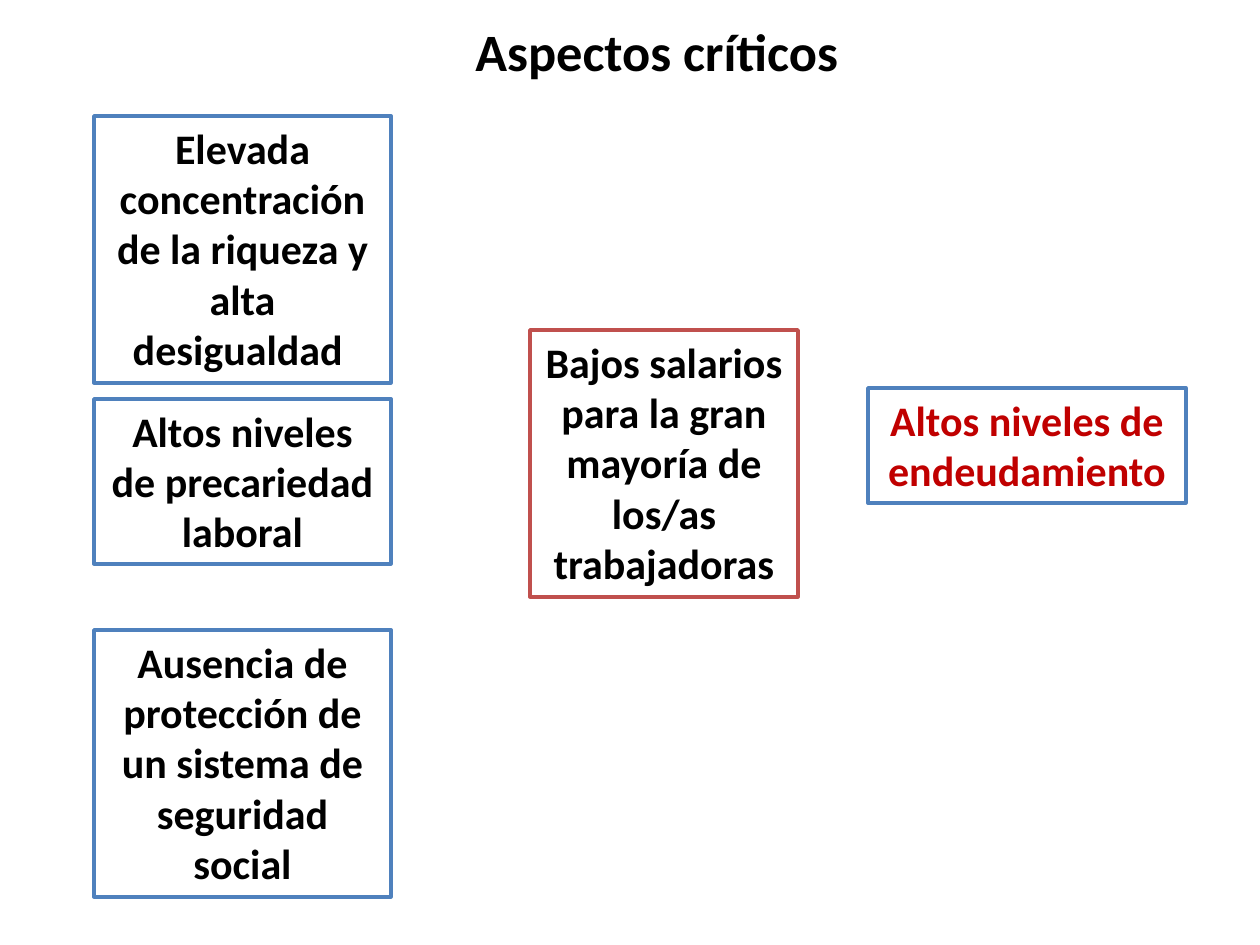
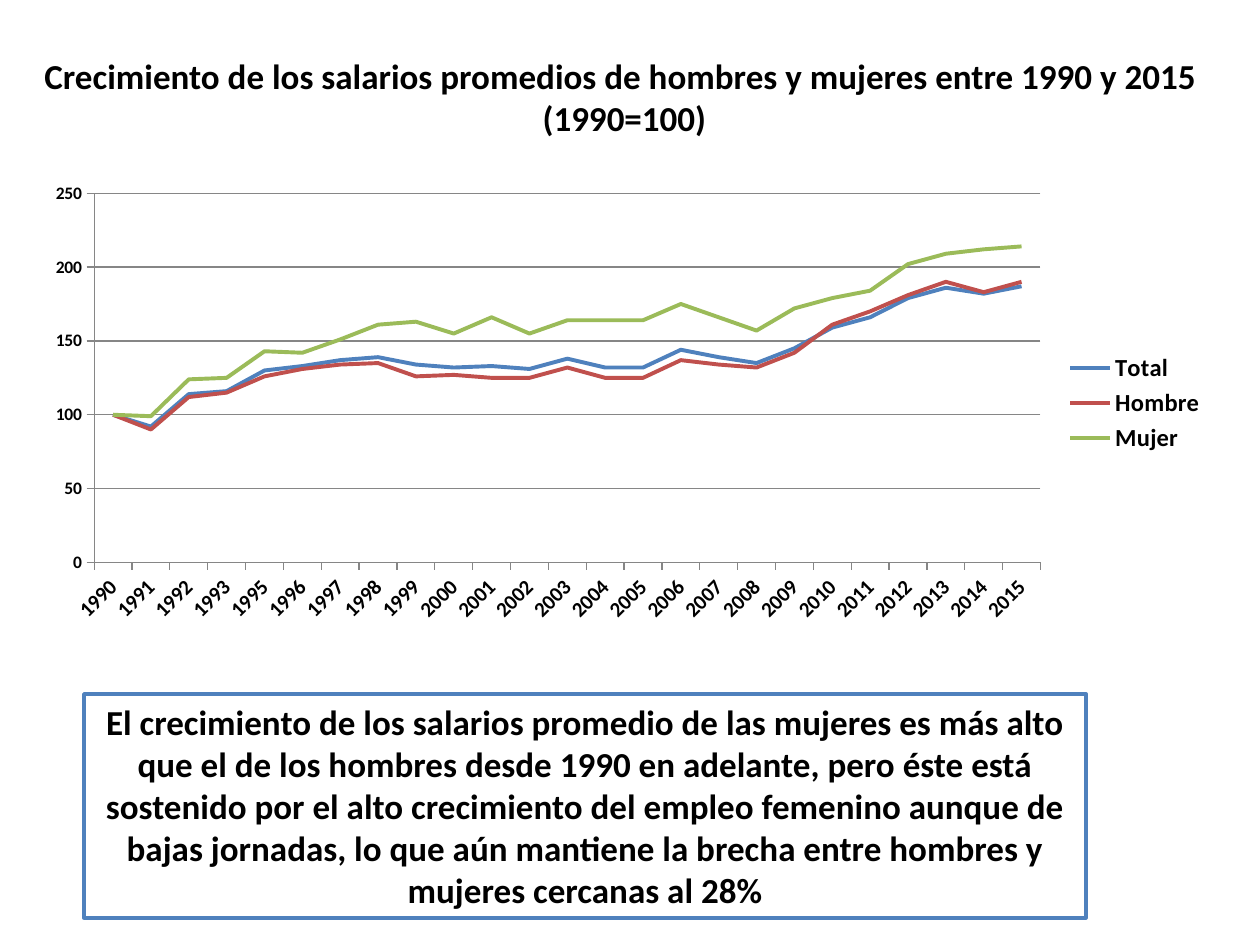
import pptx
import pptx.chart.data
import pptx.dml.color
import pptx.enum.chart
import pptx.enum.shapes
import pptx.enum.text
import pptx.util
from lxml import etree
from dataclasses import dataclass

PX = pptx.util.Inches(1) / 126


@dataclass(frozen=True)
class Theme:
    font: str = "Calibri"
    black: str = "000000"
    white: str = "FFFFFF"
    grid: str = "868686"
    blue: str = "4F81BD"
    red: str = "C0504D"
    green: str = "9BBB59"
    alert: str = "C00000"
    box_size: int = 24
    small_size: int = 20
    border: int = 2


THEME = Theme()

# Places are left, top, width, height in px
ASPECTS_TITLE = ("Aspectos críticos", (74, 13, 1166, 103), 30)
CAUSE_LEFT, CAUSE_WIDTH = 94, 297
CAUSES = [  # text, top, height
    ("Elevada concentración de la riqueza y alta desigualdad ", 116, 267),
    ("Altos niveles de precariedad laboral", 399, 165),
    ("Ausencia de protección de un sistema de seguridad social", 630, 267),
]
LOW_WAGES = ("Bajos salarios para la gran mayoría de los/as trabajadoras", (530, 330, 268, 267))
DEBT = ("Altos niveles de endeudamiento", (868, 388, 318, 115))

WAGES_TITLE = (
    "Crecimiento de los salarios promedios de hombres y mujeres entre 1990 y 2015 \v(1990=100)",
    (24, 45, 1201, 103), 20)
WAGES_PLACE = (35, 175, 1183, 456)
PLOT_AREA = {"x": 0.05, "y": 0.04, "w": 0.8, "h": 0.81}
YEARS = [str(year) for year in range(1990, 2016) if year != 1994]
WAGES = [
    ("Total", THEME.blue,
     [100, 92, 114, 116, 130, 133, 137, 139, 134, 132, 133, 131, 138,
      132, 132, 144, 139, 135, 145, 159, 166, 179, 186, 182, 187]),
    ("Hombre", THEME.red,
     [100, 90, 112, 115, 126, 131, 134, 135, 126, 127, 125, 125, 132,
      125, 125, 137, 134, 132, 142, 161, 170, 181, 190, 183, 190]),
    ("Mujer", THEME.green,
     [100, 99, 124, 125, 143, 142, 151, 161, 163, 155, 166, 155, 164,
      164, 164, 175, 166, 157, 172, 179, 184, 202, 209, 212, 214]),
]
CONCLUSION = (
    "El crecimiento de los salarios promedio de las mujeres es más alto que el de los hombres "
    "desde 1990 en adelante, pero éste está sostenido por el alto crecimiento del empleo femenino "
    "aunque de bajas jornadas, lo que aún mantiene la brecha entre hombres y mujeres cercanas al 28%",
    (84, 694, 1002, 224))


def emu(place):
    return [round(length * PX) for length in place]


def rgb(value):
    return pptx.dml.color.RGBColor.from_string(value)


def style_font(font, size, color=THEME.black):
    font.name = THEME.font
    font.size = pptx.util.Pt(size)
    font.bold = True
    font.color.rgb = rgb(color)


def write(frame, text, size, color=THEME.black):
    frame.text = text
    frame.word_wrap = True
    for paragraph in frame.paragraphs:
        paragraph.alignment = pptx.enum.text.PP_ALIGN.CENTER
        for run in paragraph.runs:
            style_font(run.font, size, color)


def add_titled_slide(deck, text, place, size, anchor):
    slide = deck.slides.add_slide(deck.slide_layouts.get_by_name("Title Only"))
    title = slide.shapes.title
    title.left, title.top, title.width, title.height = emu(place)
    write(title.text_frame, text, size)
    title.text_frame.auto_size = pptx.enum.text.MSO_AUTO_SIZE.NONE
    title.text_frame.vertical_anchor = anchor
    return slide


def add_box(slide, text, place, size=THEME.box_size, border=THEME.blue, color=THEME.black):
    box = slide.shapes.add_shape(pptx.enum.shapes.MSO_SHAPE.RECTANGLE, *emu(place))
    box.shadow.inherit = False
    box.fill.solid()
    box.fill.fore_color.rgb = rgb(THEME.white)
    box.line.color.rgb = rgb(border)
    box.line.width = pptx.util.Pt(THEME.border)
    write(box.text_frame, text, size, color)
    box.text_frame.vertical_anchor = pptx.enum.text.MSO_ANCHOR.TOP
    box.text_frame.auto_size = pptx.enum.text.MSO_AUTO_SIZE.SHAPE_TO_FIT_TEXT


def fix_plot_area(chart):
    """Pin the inner plot area to fixed fractions of the chart."""
    plot_area = chart.plots[0]._element.getparent()
    namespace = etree.QName(plot_area).namespace
    for old in plot_area.findall(f"{{{namespace}}}layout"):
        plot_area.remove(old)
    settings = [("layoutTarget", "inner"), ("xMode", "edge"), ("yMode", "edge"), *PLOT_AREA.items()]
    values = "".join(f'<c:{tag} val="{value}"/>' for tag, value in settings)
    plot_area.insert(0, pptx.oxml.parse_xml(
        f'<c:layout xmlns:c="{namespace}"><c:manualLayout>{values}</c:manualLayout></c:layout>'))


def add_wage_chart(slide):
    data = pptx.chart.data.CategoryChartData(number_format="0")
    data.categories = YEARS
    for name, _, values in WAGES:
        data.add_series(name, values)
    chart = slide.shapes.add_chart(
        pptx.enum.chart.XL_CHART_TYPE.LINE, *emu(WAGES_PLACE), data).chart
    chart.has_title = False
    style_font(chart.font, 10)

    chart.plots[0].vary_by_categories = False
    for series, (_, color, _) in zip(chart.plots[0].series, WAGES):
        series.smooth = False
        series.marker.style = pptx.enum.chart.XL_MARKER_STYLE.NONE
        series.format.line.color.rgb = rgb(color)
        series.format.line.width = pptx.util.Pt(2.25)

    years, index = chart.category_axis, chart.value_axis
    for axis, size in ((years, 12), (index, 10)):
        style_font(axis.tick_labels.font, size)
        axis.major_tick_mark = pptx.enum.chart.XL_TICK_MARK.OUTSIDE
        axis.minor_tick_mark = pptx.enum.chart.XL_TICK_MARK.NONE
        axis.format.line.color.rgb = rgb(THEME.grid)
    years.tick_labels.font._element.getparent().getparent().getparent().bodyPr.set("rot", "-2700000")
    index.minimum_scale, index.maximum_scale, index.major_unit = 0, 250, 50
    index.tick_labels.number_format = "0"
    index.tick_labels.number_format_is_linked = False
    index.has_major_gridlines = True
    index.major_gridlines.format.line.color.rgb = rgb(THEME.grid)

    chart.has_legend = True
    chart.legend.position = pptx.enum.chart.XL_LEGEND_POSITION.RIGHT
    chart.legend.include_in_layout = False
    style_font(chart.legend.font, 14)
    fix_plot_area(chart)


def main():
    deck = pptx.Presentation()
    deck.slide_width, deck.slide_height = pptx.util.Inches(10), pptx.util.Inches(7.5)
    anchors = pptx.enum.text.MSO_ANCHOR

    aspects = add_titled_slide(deck, *ASPECTS_TITLE, anchors.TOP)
    for text, top, height in CAUSES:
        add_box(aspects, text, (CAUSE_LEFT, top, CAUSE_WIDTH, height))
    add_box(aspects, *LOW_WAGES, border=THEME.red)
    add_box(aspects, *DEBT, color=THEME.alert)

    wages = add_titled_slide(deck, *WAGES_TITLE, anchors.MIDDLE)
    add_wage_chart(wages)
    add_box(wages, *CONCLUSION, size=THEME.small_size)
    deck.save("out.pptx")


if __name__ == "__main__":
    main()
